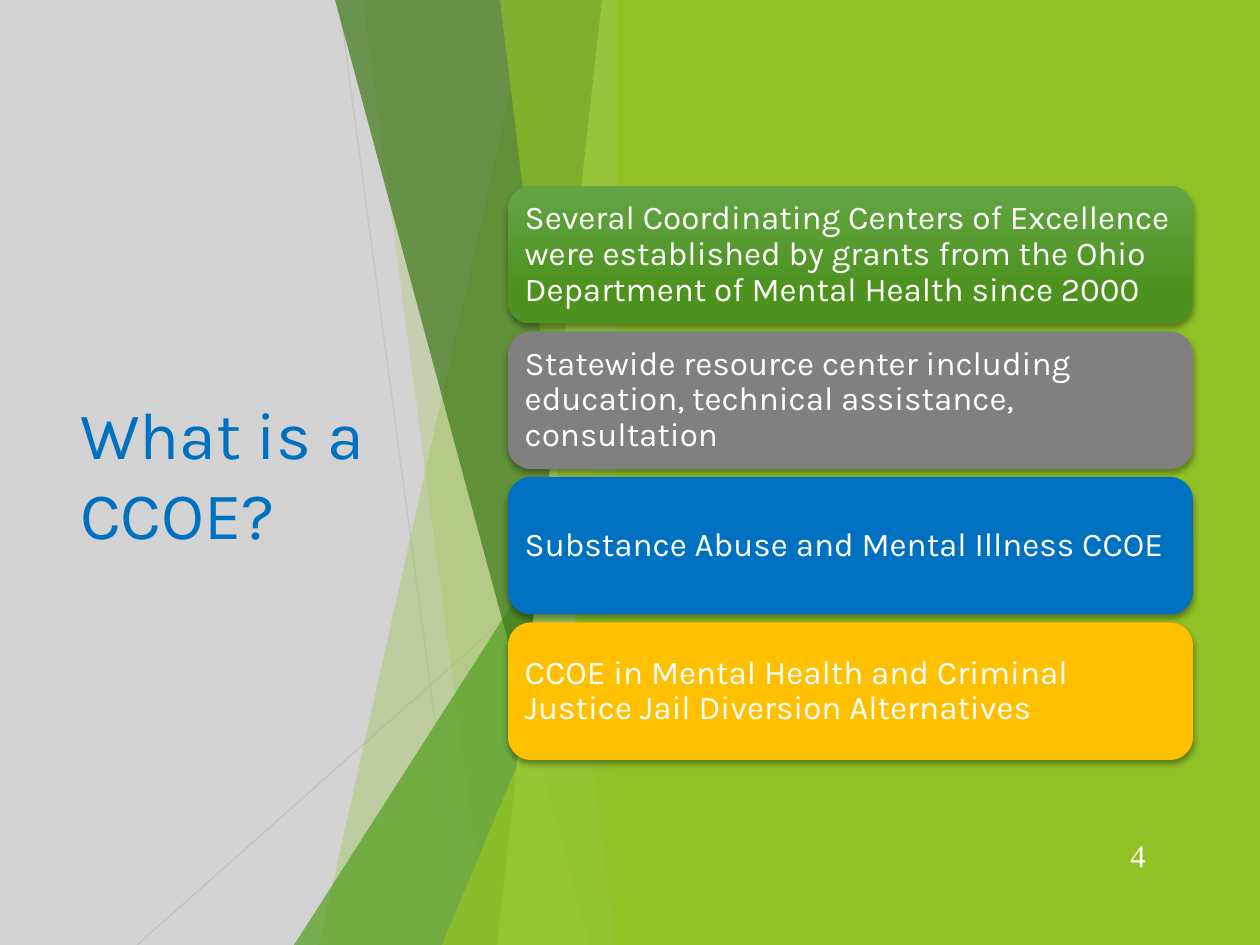
from dataclasses import dataclass

from lxml import etree
from pptx import Presentation
from pptx import util as u
from pptx.dml.color import RGBColor
from pptx.enum import shapes, text
from pptx.oxml.ns import qn

SCALE = 914400 / 126  # EMU per px
WIDTH, HEIGHT = 1260, 945


@dataclass(frozen=True)
class Theme:
    paper: str = "D3D3D3"
    lime: str = "90C226"
    green: str = "54A021"
    forest: str = "3F7819"
    pale: str = "C0E474"
    rule: str = "BFBFBF"
    title: str = "0070C0"
    light: str = "FFFFFF"
    cards: tuple = (("63A545", "4D921E"), ("808080",), ("0070C0",), ("FFC000",))
    font: str = "Karla"
    number_font: str = "Times New Roman"
    title_size: int = 38
    card_size: int = 19
    number_size: int = 18


THEME = Theme()


def px(value):
    return u.Emu(round(value * SCALE))


def rgb(color):
    return RGBColor.from_string(color)


def add_alpha(fill_parent, percent):
    color = fill_parent.find(".//" + qn("a:srgbClr"))
    etree.SubElement(color, qn("a:alpha"), val=str(percent * 1000))


def paint(shape, color, opacity=100):
    shape.shadow.inherit = False
    shape.fill.solid()
    shape.fill.fore_color.rgb = rgb(color)
    shape.line.fill.background()
    if opacity < 100:
        add_alpha(shape._element.spPr, opacity)


def add_run(paragraph, words, font, size, color):
    run = paragraph.add_run()
    run.text = words
    run.font.name = font
    run.font.size = u.Pt(size)
    run.font.color.rgb = rgb(color)


def set_frame(frame, inset_x, inset_y):
    frame.word_wrap = True
    frame.auto_size = text.MSO_AUTO_SIZE.NONE
    frame.vertical_anchor = text.MSO_ANCHOR.MIDDLE
    frame.margin_left = frame.margin_right = px(inset_x)
    frame.margin_top = frame.margin_bottom = px(inset_y)


def add_rule(slide, start, end, opacity):
    rule = slide.shapes.add_connector(
        shapes.MSO_CONNECTOR.STRAIGHT, *map(px, start + end))
    rule.line.color.rgb = rgb(THEME.rule)
    rule.line.width = u.Pt(0.75)
    add_alpha(rule._element.spPr, opacity)
    etree.SubElement(rule._element.spPr, qn("a:effectLst"))


def add_facets(slide, left, top, width, height):
    """Translucent facets, all meeting the right edge of the box."""
    right, bottom = left + width, top + height

    def add_band(top_x, bottom_x, color, opacity):
        builder = slide.shapes.build_freeform(left + top_x, top, SCALE)
        builder.add_line_segments(
            [(right, top), (right, bottom), (left + bottom_x, bottom)])
        paint(builder.convert_to_shape(), color, opacity)

    def add_corner(x, y, color, opacity):
        corner = slide.shapes.add_shape(
            shapes.MSO_SHAPE.ISOSCELES_TRIANGLE,
            px(left + x), px(top + y), px(width - x), px(height - y))
        corner.adjustments[0] = 1
        paint(corner, color, opacity)

    add_rule(slide, (left + 45, top), (left + 171, bottom), 75)
    add_rule(slide, (right, top + 508), (left - 157, bottom), 80)
    add_band(237, 25, THEME.lime, 30)
    add_band(69, 194, THEME.lime, 20)
    add_corner(0, 420, THEME.green, 72)
    add_band(41, 296, THEME.forest, 70)
    add_band(308, 203, THEME.pale, 70)
    add_band(206, 321, THEME.lime, 65)
    add_corner(148, 495, THEME.lime, 80)


def add_panel(slide, left, top, width, height):
    panel = slide.shapes.add_shape(
        shapes.MSO_SHAPE.RECTANGLE, *map(px, (left, top, width, height)))
    paint(panel, THEME.lime)


def add_title(slide, words, left, top, width, height):
    title = slide.shapes.title
    title.left, title.top, title.width, title.height = map(
        px, (left, top, width, height))
    set_frame(title.text_frame, 13, 6)
    paragraph = title.text_frame.paragraphs[0]
    paragraph.alignment = text.PP_ALIGN.LEFT
    add_run(paragraph, words, THEME.font, THEME.title_size, THEME.title)


def add_card_shadow(card):
    effects = card._element.spPr.find(qn("a:effectLst"))
    shadow = etree.SubElement(
        effects, qn("a:outerShdw"), blurRad=str(u.Pt(3)), dist=str(u.Pt(2)),
        dir="5400000", algn="ctr", rotWithShape="0")
    etree.SubElement(shadow, qn("a:srgbClr"), val="000000")
    add_alpha(shadow, 35)


def add_cards(slide, messages, left, top, width, height):
    """Equal rounded cards stacked to fill the box."""
    gap = 8
    card_height = (height - gap * (len(messages) - 1)) / len(messages)
    for index, (words, colors) in enumerate(zip(messages, THEME.cards)):
        card = slide.shapes.add_shape(
            shapes.MSO_SHAPE.ROUNDED_RECTANGLE, px(left),
            px(top + index * (card_height + gap)), px(width), px(card_height))
        paint(card, colors[0])
        if len(colors) > 1:
            card.fill.gradient()
            card.fill.gradient_angle = 270
            for stop, color, position in zip(
                    card.fill.gradient_stops, colors, (0, 0.78)):
                stop.color.rgb = rgb(color)
                stop.position = position
        add_card_shadow(card)
        # The rounded corners inset the text by a further 7 px
        set_frame(card.text_frame, 10, 10)
        paragraph = card.text_frame.paragraphs[0]
        paragraph.alignment = text.PP_ALIGN.LEFT
        paragraph.line_spacing = 0.9
        add_run(paragraph, words, THEME.font, THEME.card_size, THEME.light)


def add_number(slide, number, left, top, width, height):
    box = slide.shapes.add_textbox(*map(px, (left, top, width, height)))
    set_frame(box.text_frame, 13, 6)
    paragraph = box.text_frame.paragraphs[0]
    paragraph.alignment = text.PP_ALIGN.RIGHT
    paragraph.line_spacing = 0.9
    paragraph.space_after = u.Pt(6)
    add_run(paragraph, number, THEME.number_font, THEME.number_size, THEME.light)


def main():
    presentation = Presentation()
    presentation.slide_width, presentation.slide_height = px(WIDTH), px(HEIGHT)
    slide = presentation.slides.add_slide(presentation.slide_layouts[5])
    slide.background.fill.solid()
    slide.background.fill.fore_color.rgb = rgb(THEME.paper)

    # Left side: title under the facets
    add_title(slide, "What is a CCOE?", 67, 190, 367, 565)
    add_facets(slide, 294, 0, 336, HEIGHT)

    # Right side: green panel with cards and page number
    add_panel(slide, 617, 0, WIDTH - 617, HEIGHT)
    add_number(slide, "4", 1089, 832, 70, 50)
    add_cards(slide, (
        "Several Coordinating Centers of Excellence were established by grants "
        "from the Ohio Department of Mental Health since 2000",
        "Statewide resource center including education, technical assistance, "
        "consultation",
        "Substance Abuse and Mental Illness CCOE",
        "CCOE in Mental Health and Criminal Justice Jail Diversion Alternatives",
    ), 508, 186, 685, 574)

    presentation.save("out.pptx")


if __name__ == "__main__":
    main()
